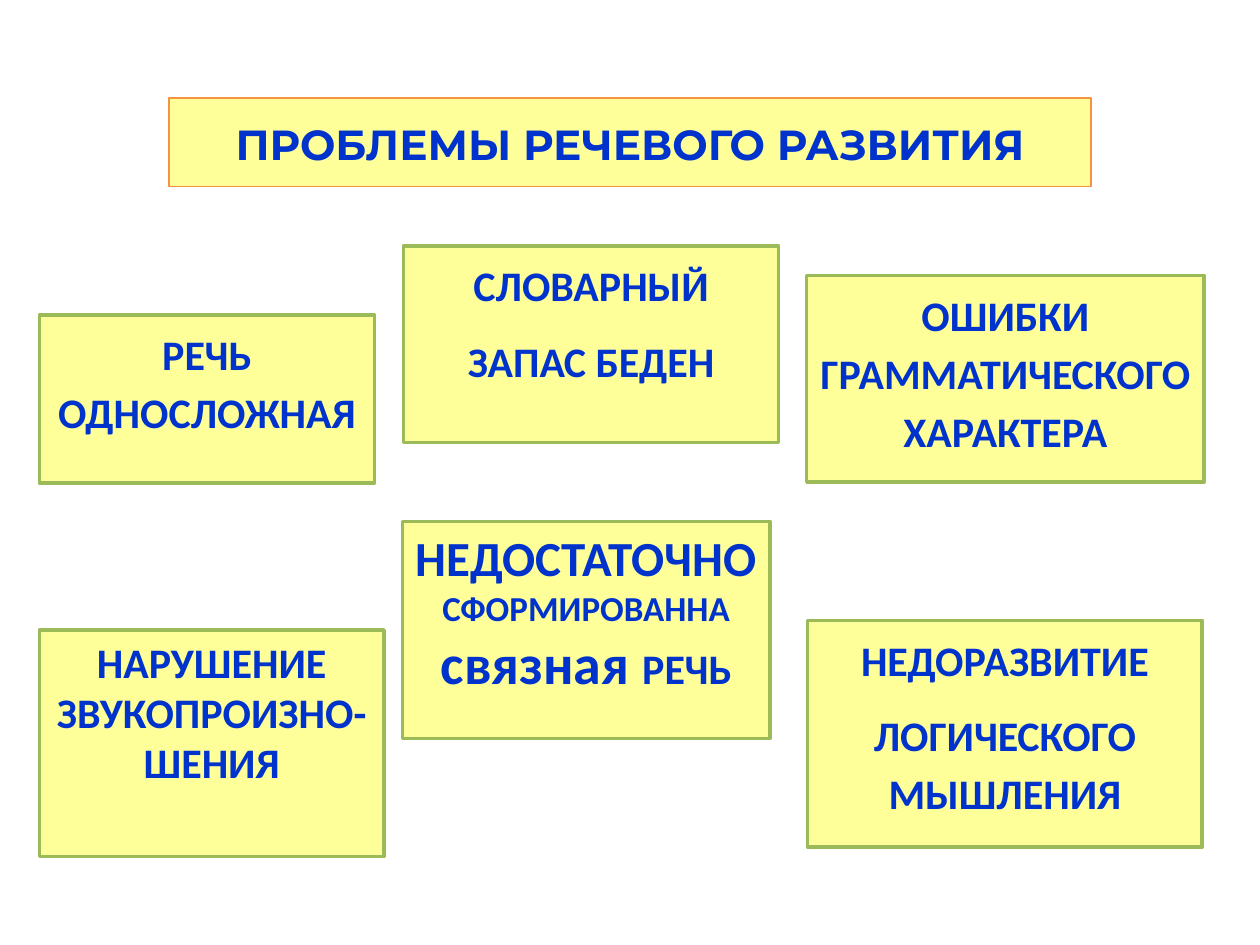
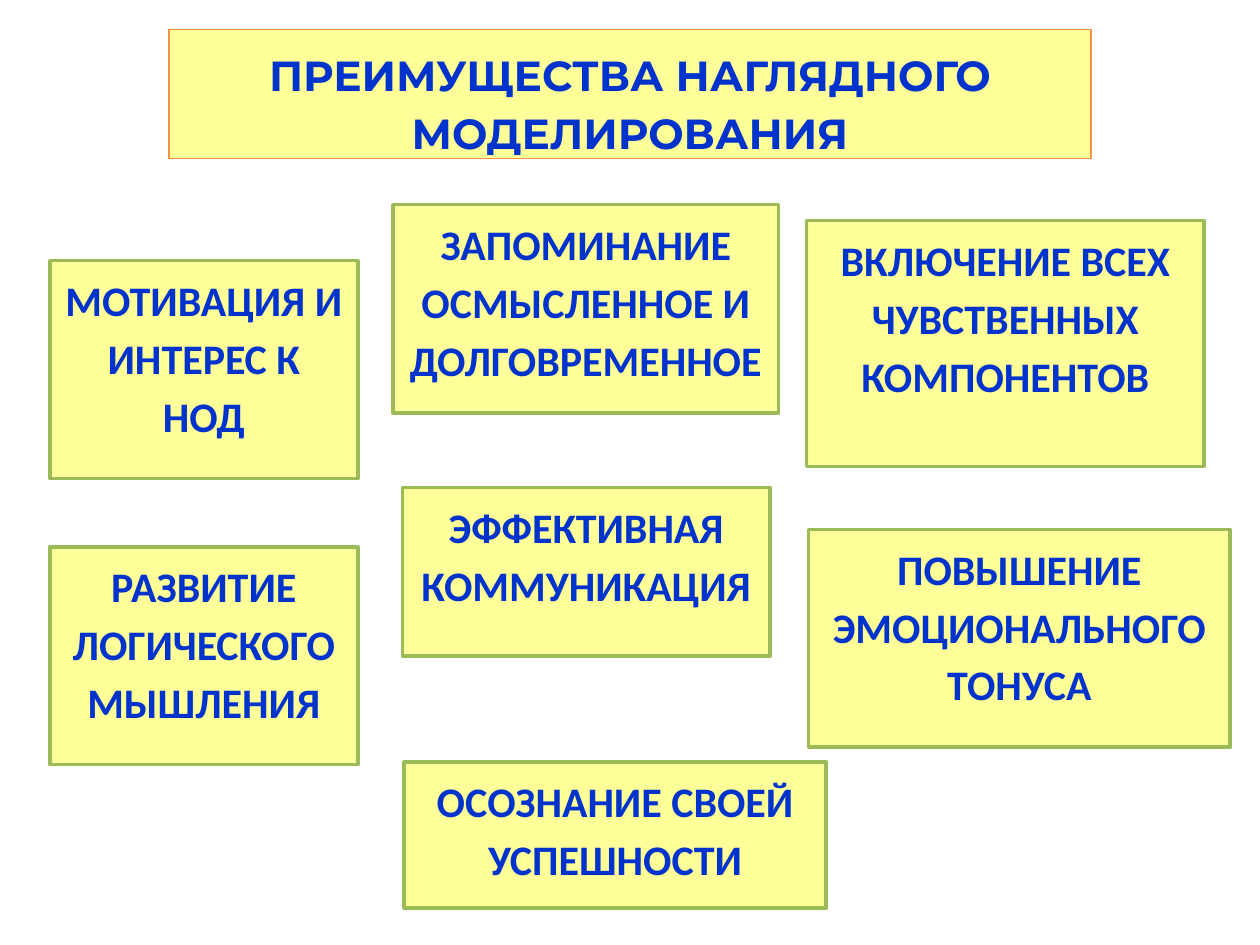
from pptx import Presentation
from pptx.dml.color import RGBColor
from pptx.enum.shapes import MSO_SHAPE as Shape
from pptx.enum.text import MSO_ANCHOR as Anchor, MSO_AUTO_SIZE as AutoSize, PP_ALIGN as Align
from pptx.util import Pt

COLORS = {"panel": "FFFF99", "title_line": "F69240", "card_line": "9BBB59", "text": "0033CC"}
TITLE_LEFT, TITLE_WIDTH = 96.5, 527
TEXT_SIZE = 24
LOOSE = 1.15

PROBLEMS = [
    ((22.5, 180, 191.5, 96), ["РЕЧЬ ОДНОСЛОЖНАЯ"], LOOSE, 10),
    ((461, 157.5, 227, 118), ["ОШИБКИ ГРАММАТИЧЕСКОГО ХАРАКТЕРА"], LOOSE, 10),
    ((230.5, 140.5, 214.5, 112.5), ["СЛОВАРНЫЙ", "ЗАПАС БЕДЕН"], LOOSE, 10),
    ((22.5, 360, 197, 129.5), ["НАРУШЕНИЕ ЗВУКОПРОИЗНО-ШЕНИЯ"], 1.0, 10),
    ((230, 298, 210, 124), [
        [("НЕДОСТАТОЧНО ", 28), ("СФОРМИРОВАННА", 20)],
        [("связная ", 32), ("РЕЧЬ", 24)],
    ], 1.0, 0),
    ((461.5, 354.5, 225.5, 129.5), ["НЕДОРАЗВИТИЕ", "ЛОГИЧЕСКОГО МЫШЛЕНИЯ"], LOOSE, 10),
]

ADVANTAGES = [
    ((28.5, 149, 176, 124.5), ["МОТИВАЦИЯ И ИНТЕРЕС К\vНОД"], LOOSE, 10),
    ((461, 126, 227, 140.5), ["ВКЛЮЧЕНИЕ ВСЕХ ЧУВСТВЕННЫХ КОМПОНЕНТОВ"], LOOSE, 10),
    ((224.5, 117, 220.5, 119), ["ЗАПОМИНАНИЕ ОСМЫСЛЕННОЕ И ДОЛГОВРЕМЕННОЕ"], LOOSE, 10),
    ((28.5, 312.5, 176, 124.5), ["РАЗВИТИЕ ЛОГИЧЕСКОГО МЫШЛЕНИЯ"], LOOSE, 10),
    ((230, 278.5, 210, 96.5), ["ЭФФЕКТИВНАЯ КОММУНИКАЦИЯ"], LOOSE, 10),
    ((462, 302.5, 241, 124.5), ["ПОВЫШЕНИЕ ЭМОЦИОНАЛЬНОГО ТОНУСА"], LOOSE, 10),
    ((231, 435.5, 241, 83.5), ["ОСОЗНАНИЕ СВОЕЙ УСПЕШНОСТИ"], LOOSE, 10),
]


def color(name):
    return RGBColor.from_string(COLORS[name])


def style_panel(panel, line_name, line_width):
    panel.fill.solid()
    panel.fill.fore_color.rgb = color("panel")
    panel.line.color.rgb = color(line_name)
    panel.line.width = Pt(line_width)
    frame = panel.text_frame
    frame.word_wrap = True
    frame.auto_size = AutoSize.NONE
    frame.vertical_anchor = Anchor.TOP
    return frame


def style_paragraph(para, font_name, spacing):
    para.alignment = Align.CENTER
    para.line_spacing = spacing
    para.font.name = font_name
    para.font.size = Pt(TEXT_SIZE)
    para.font.bold = True
    para.font.color.rgb = color("text")


def add_title(page, text, top, height):
    title = page.shapes.title
    title.left, title.top = Pt(TITLE_LEFT), Pt(top)
    title.width, title.height = Pt(TITLE_WIDTH), Pt(height)
    frame = style_panel(title, "title_line", 0.75)
    frame.margin_top = Pt(7.2)
    frame.margin_bottom = Pt(0)
    frame.text = text
    style_paragraph(frame.paragraphs[0], "Montserrat", LOOSE)


def add_card(page, box, paragraphs, spacing, gap):
    card = page.shapes.add_shape(Shape.RECTANGLE, *map(Pt, box))
    card.shadow.inherit = False
    frame = style_panel(card, "card_line", 2)
    for index, content in enumerate(paragraphs):
        para = frame.add_paragraph() if index else frame.paragraphs[0]
        if isinstance(content, str):
            para.text = content
        else:
            for text, size in content:
                span = para.add_run()
                span.text = text
                span.font.size = Pt(size)
        style_paragraph(para, "Calibri", spacing)
        para.space_before = Pt(gap if index else 0)


def add_page(deck, title, title_top, title_height, cards):
    page = deck.slides.add_slide(deck.slide_layouts.get_by_name("Title Only"))
    add_title(page, title, title_top, title_height)
    for card in cards:
        add_card(page, *card)


def main():
    deck = Presentation()
    deck.slide_width, deck.slide_height = Pt(720), Pt(540)
    add_page(deck, "ПРОБЛЕМЫ РЕЧЕВОГО РАЗВИТИЯ", 56, 50.5, PROBLEMS)
    add_page(deck, "ПРЕИМУЩЕСТВА НАГЛЯДНОГО МОДЕЛИРОВАНИЯ", 17, 73.5, ADVANTAGES)
    deck.save("out.pptx")


if __name__ == "__main__":
    main()
